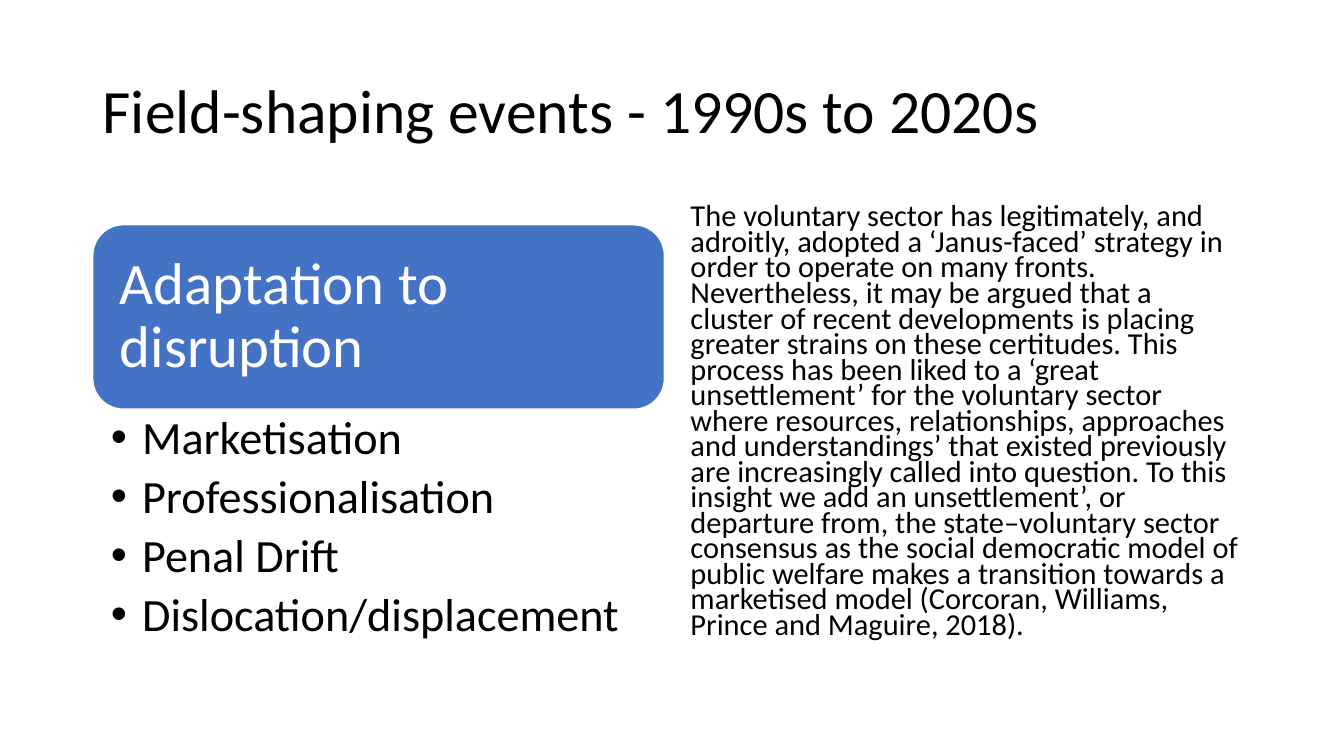
from dataclasses import dataclass, field

from lxml.etree import SubElement
from pptx import Presentation
from pptx.dml.color import RGBColor
from pptx.enum.shapes import MSO_SHAPE
from pptx.enum.text import MSO_ANCHOR, PP_ALIGN
from pptx.oxml.ns import qn
from pptx.slide import Slide
from pptx.util import Emu, Pt

EMU_PER_PX = 9144
FONT = "Calibri"
BLACK = RGBColor(0x00, 0x00, 0x00)
WHITE = RGBColor(0xFF, 0xFF, 0xFF)
BLUE = RGBColor(0x44, 0x72, 0xC4)
BULLET_INDENT = 31

TITLE = "Field-shaping events - 1990s to 2020s"
HEADING = "Adaptation to disruption"
EVENTS = ("Marketisation", "Professionalisation", "Penal Drift", "Dislocation/displacement")
ARGUMENT = (
    "The voluntary sector has legitimately, and adroitly, adopted a ‘Janus-faced’ strategy "
    "in order to operate on many fronts. Nevertheless, it may be argued that a cluster of "
    "recent developments is placing greater strains on these certitudes. This process has "
    "been liked to a ‘great unsettlement’ for the voluntary sector where resources, "
    "relationships, approaches and understandings’ that existed previously are increasingly "
    "called into question. To this insight we add an unsettlement’, or departure from, the "
    "state–voluntary sector consensus as the social democratic model of public welfare makes "
    "a transition towards a marketised model (Corcoran, Williams, Prince and Maguire, 2018)."
)


@dataclass(frozen=True)
class TextBlock:
    """A block of text, placed in px, with its look."""

    box: tuple[int, int, int, int]
    lines: tuple[str, ...]
    size: float
    color: RGBColor = BLACK
    fill: RGBColor | None = None
    bulleted: bool = False
    anchor: MSO_ANCHOR = MSO_ANCHOR.TOP
    insets: tuple[int, int, int, int] = (10, 5, 10, 5)
    spacing: dict[str, float | Pt] = field(default_factory=lambda: {"line_spacing": 0.9})


BLOCKS = (
    TextBlock((92, 40, 1150, 145), (TITLE,), 44, anchor=MSO_ANCHOR.MIDDLE),
    TextBlock((92, 223, 567, 183), (HEADING,), 42, WHITE, BLUE,
              anchor=MSO_ANCHOR.MIDDLE, insets=(18, 17, 18, 17)),
    TextBlock((92, 405, 567, 247), EVENTS, 33, bulleted=True, insets=(18, 6, 33, 6),
              spacing={"line_spacing": 0.9, "space_after": Pt(6.6)}),
    TextBlock((675, 200, 565, 476), (ARGUMENT,), 21.7,
              spacing={"line_spacing": 0.7, "space_before": Pt(10)}),
)


def px(length: int) -> Emu:
    """Turn px into EMU."""
    return Emu(length * EMU_PER_PX)


def apply_format(target: object, values: dict[str, object]) -> None:
    """Set each named attribute on the target."""
    for name, value in values.items():
        setattr(target, name, value)


def add_bullet(paragraph: object) -> None:
    """Give the paragraph a hanging round bullet."""
    properties = paragraph._p.get_or_add_pPr()
    properties.set("marL", str(px(BULLET_INDENT)))
    properties.set("indent", str(-px(BULLET_INDENT)))
    SubElement(properties, qn("a:buFont"), typeface="Arial")
    SubElement(properties, qn("a:buChar"), char="•")


def draw_block(slide: Slide, block: TextBlock) -> None:
    """Draw a text block, on a rounded card when it has a fill."""
    box = tuple(map(px, block.box))
    if block.fill is None:
        shape = slide.shapes.add_textbox(*box)
    else:
        shape = slide.shapes.add_shape(MSO_SHAPE.ROUNDED_RECTANGLE, *box)
        shape.shadow.inherit = False
        shape.fill.solid()
        shape.fill.fore_color.rgb = block.fill
        shape.line.color.rgb = WHITE
        shape.line.width = Pt(1)
    frame = shape.text_frame
    margins = ("margin_left", "margin_top", "margin_right", "margin_bottom")
    apply_format(frame, {"word_wrap": True, "vertical_anchor": block.anchor,
                         "text": "\n".join(block.lines),
                         **dict(zip(margins, map(px, block.insets)))})
    for paragraph in frame.paragraphs:
        apply_format(paragraph, {"alignment": PP_ALIGN.LEFT, **block.spacing})
        if block.bulleted:
            add_bullet(paragraph)
        font = paragraph.runs[0].font
        apply_format(font, {"name": FONT, "size": Pt(block.size)})
        font.color.rgb = block.color


def main() -> None:
    """Build the slide and save it."""
    presentation = Presentation()
    apply_format(presentation, {"slide_width": px(1333), "slide_height": px(750)})
    slide = presentation.slides.add_slide(presentation.slide_layouts[6])
    for block in BLOCKS:
        draw_block(slide, block)
    presentation.save("out.pptx")


if __name__ == "__main__":
    main()
